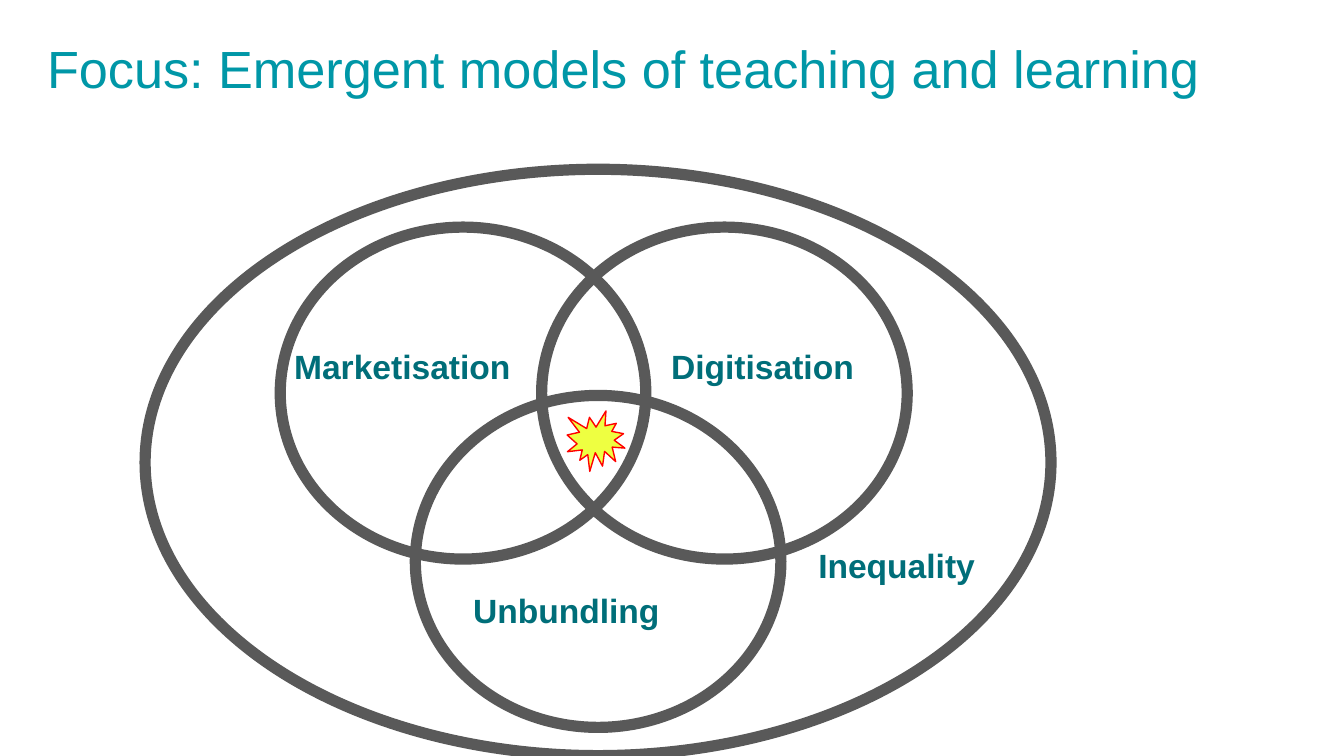
from typing import NamedTuple

from pptx import Presentation
from pptx.dml.color import RGBColor
from pptx.enum.shapes import MSO_SHAPE
from pptx.enum.text import MSO_ANCHOR, MSO_AUTO_SIZE, PP_ALIGN
from pptx.util import Inches, Pt

CELL = 0.25  # inches per grid column and row
COLORS = {
    "title": "0097A7",
    "label": "006E79",
    "ring": "595959",
    "burst": "EEFF41",
    "burst_line": "FF0000",
}


class Box(NamedTuple):
    """A rectangle in grid columns and rows."""
    column: float
    row: float
    columns: float
    rows: float

    def lengths(self) -> list:
        return [Inches(cells * CELL) for cells in self]


class Label(NamedTuple):
    text: str
    column: float
    row: float


SLIDE_COLUMNS, SLIDE_ROWS = 40, 22.5
TITLE_BOX = Box(1, 0.68, 37.28, 4.36)
CIRCLE_SIZE = (10.88, 9.88)
CIRCLE_CORNERS = [(8.34, 6.76), (16.12, 6.76), (12.36, 11.77)]
RINGS = [Box(*corner, *CIRCLE_SIZE) for corner in CIRCLE_CORNERS]
RINGS.append(Box(4.32, 5.04, 26.96, 17.45))
LABEL_SIZE = (8.24, 1.36)
LABELS = [
    Label("Marketisation", 8.36, 9.9),
    Label("Unbundling", 13.69, 17.16),
    Label("Digitisation", 19.58, 9.9),
    Label("Inequality", 23.96, 15.82),
]
BURST_BOX = Box(16.88, 12.23, 1.72, 1.8)


def color(name: str) -> RGBColor:
    return RGBColor.from_string(COLORS[name])


def write_text(shape, text: str, size: float, color_name: str, bold: bool) -> None:
    frame = shape.text_frame
    frame.word_wrap = True
    frame.auto_size = MSO_AUTO_SIZE.NONE
    frame.vertical_anchor = MSO_ANCHOR.TOP
    frame.margin_left = frame.margin_right = Inches(0.1)
    frame.margin_top = frame.margin_bottom = Inches(0.1)
    paragraph = frame.paragraphs[0]
    paragraph.alignment = PP_ALIGN.LEFT
    paragraph.line_spacing = 1.0
    run = paragraph.add_run()
    run.text = text
    run.font.name = "Arial"
    run.font.size = Pt(size)
    run.font.bold = bold
    run.font.color.rgb = color(color_name)


def add_outlined(slide, kind: MSO_SHAPE, box: Box, line: str, width: float,
                 fill: str | None = None) -> None:
    shape = slide.shapes.add_shape(kind, *box.lengths())
    shape.shadow.inherit = False
    if fill:
        shape.fill.solid()
        shape.fill.fore_color.rgb = color(fill)
    else:
        shape.fill.background()
    shape.line.color.rgb = color(line)
    shape.line.width = Pt(width)


def main() -> None:
    presentation = Presentation()
    presentation.slide_width = Inches(SLIDE_COLUMNS * CELL)
    presentation.slide_height = Inches(SLIDE_ROWS * CELL)
    slide = presentation.slides.add_slide(presentation.slide_layouts[5])

    title = slide.shapes.title
    title.left, title.top, title.width, title.height = TITLE_BOX.lengths()
    write_text(title, "Focus: Emergent models of teaching and learning", 28, "title", False)

    for ring in RINGS:
        add_outlined(slide, MSO_SHAPE.OVAL, ring, "ring", 6)
    for label in LABELS:
        box = Box(label.column, label.row, *LABEL_SIZE)
        text_box = slide.shapes.add_textbox(*box.lengths())
        write_text(text_box, label.text, 18, "label", True)
    add_outlined(slide, MSO_SHAPE.EXPLOSION1, BURST_BOX, "burst_line", 0.75, "burst")

    presentation.save("out.pptx")


if __name__ == "__main__":
    main()
